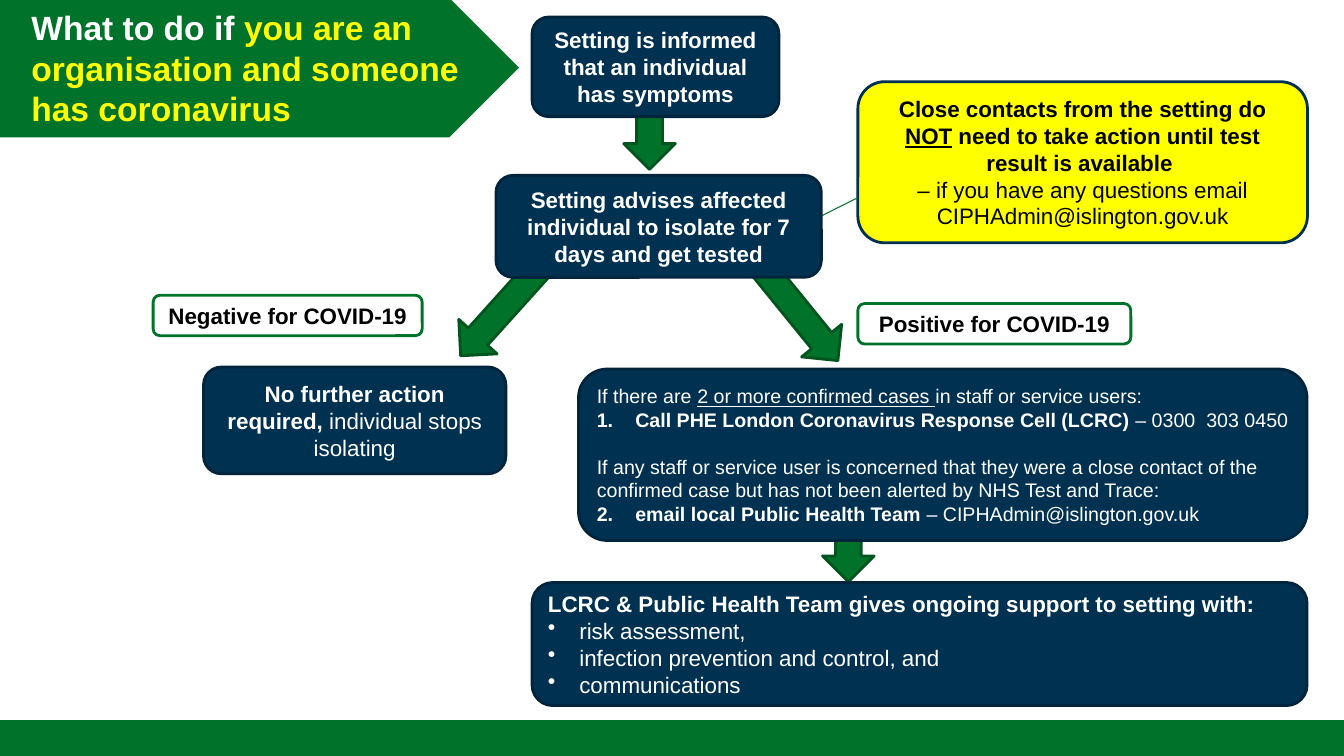
"""Flowchart slide: what an organisation does when someone has coronavirus."""
from lxml import etree
from pptx import Presentation
from pptx import util as u
from pptx.dml.color import RGBColor
from pptx.enum import shapes, text
from pptx.oxml import ns

COLOURS = {
    "green": "007229", "dark green": "00541E", "link green": "006F28",
    "navy": "003151", "dark navy": "00243C",
    "yellow": "FFFF00", "white": "FFFFFF", "black": "000000",
}
KIND = shapes.MSO_SHAPE

deck = Presentation()
deck.slide_width, deck.slide_height = u.Cm(33.87), u.Cm(19.05)
slide = deck.slides.add_slide(deck.slide_layouts[6])


def add_block(kind, box, fill, edge, width=2):
    block = slide.shapes.add_shape(kind, *[u.Cm(length) for length in box])
    block.shadow.inherit = False
    block.fill.solid()
    block.fill.fore_color.rgb = RGBColor.from_string(COLOURS[fill])
    block.line.color.rgb = RGBColor.from_string(COLOURS[edge])
    block.line.width = u.Pt(width)
    return block


def write(block, paragraphs, colour, size=16, align=text.PP_ALIGN.CENTER):
    """Fill a block; each paragraph is a marker, its indent and (words, style) runs."""
    frame = block.text_frame
    frame.word_wrap = True
    for index, (marker, indent, runs) in enumerate(paragraphs):
        paragraph = frame.add_paragraph() if index else frame.paragraphs[0]
        paragraph.alignment = align
        if marker:
            properties = paragraph._p.get_or_add_pPr()
            properties.set("marL", str(u.Cm(indent)))
            properties.set("indent", str(-u.Cm(indent)))
            if marker == "•":
                etree.SubElement(properties, ns.qn("a:buChar"), char=marker)
            else:
                etree.SubElement(properties, ns.qn("a:buAutoNum"),
                                 type="arabicPeriod", startAt=marker)
        for words, style in runs:
            run = paragraph.add_run()
            run.text = words
            run.font.name = "Arial"
            run.font.size = u.Pt(size)
            run.font.bold = "bold" in style
            run.font.underline = "underline" in style
            shade = "yellow" if "yellow" in style else colour
            run.font.color.rgb = RGBColor.from_string(COLOURS[shade])


add_block(KIND.RECTANGLE, (0, 18.16, 33.87, 0.87), "green", "green", 0.75)

no_action = add_block(KIND.ROUNDED_RECTANGLE, (5.13, 9.25, 7.62, 2.69), "navy", "dark navy")
write(no_action, [("", 0, [("No further action required, ", "bold"),
                           ("individual stops isolating", "")])], "white")

for left, top, length, turn in [(15.72, 2.62, 1.65, 0), (19.53, 6.45, 2.97, 320.9),
                                (12.09, 6.02, 3.38, 42), (20.73, 13.03, 1.63, 0)]:
    arrow = add_block(KIND.DOWN_ARROW, (left, top, 1.3, length), "green", "dark green")
    arrow.rotation = turn

for words, left, top, width in [("Negative for COVID-19", 3.86, 7.44, 6.78),
                                ("Positive for COVID-19", 21.62, 7.65, 6.88)]:
    result = add_block(KIND.ROUNDED_RECTANGLE, (left, top, width, 1.02), "white", "green")
    write(result, [("", 0, [(words, "bold")])], "black")

contacts = add_block(KIND.ROUNDED_RECTANGLE, (21.62, 2.06, 11.33, 4.06), "yellow", "navy")
write(contacts, [
    ("", 0, [("Close contacts from the setting do ", "bold"), ("NOT", "bold underline"),
             (" need to take action until test result is available ", "bold")]),
    ("", 0, [("– if you have any questions email CIPHAdmin@islington.gov.uk", "")]),
], "black")

support = add_block(KIND.ROUNDED_RECTANGLE, (13.41, 14.68, 19.53, 3.1), "navy", "dark navy")
offers = ["risk assessment,", "infection prevention and control, and", "communications"]
write(support, [
    ("", 0, [("LCRC & Public Health Team gives ongoing support to setting with:", "bold")]),
    *[("•", 0.79, [(offer, "")]) for offer in offers],
], "white", align=text.PP_ALIGN.LEFT)

contacts_link = slide.shapes.add_connector(
    shapes.MSO_CONNECTOR.STRAIGHT, u.Cm(20.6), u.Cm(5.49), u.Cm(21.62), u.Cm(4.98))
contacts_link.line.color.rgb = RGBColor.from_string(COLOURS["link green"])
contacts_link.line.width = u.Pt(0.75)
etree.SubElement(contacts_link._element.spPr, ns.qn("a:effectLst"))

title = add_block(KIND.PENTAGON, (0, -0.05, 13.08, 3.51), "green", "green")
title.line.fill.background()
title.text_frame.margin_left = u.Cm(0.79)
write(title, [("", 0, [("What to do if ", "bold"),
                       ("you are an organisation and someone has coronavirus", "bold yellow")])],
      "white", 24, text.PP_ALIGN.LEFT)

cases = add_block(KIND.ROUNDED_RECTANGLE, (14.58, 9.3, 18.36, 4.32), "navy", "dark navy")
write(cases, [
    ("", 0, [("If there are ", ""), ("2 or more confirmed cases ", "underline"),
             ("in staff or service users:", "")]),
    ("1", 0.97, [("Call PHE London Coronavirus Response Cell (LCRC) ", "bold"),
                 ("– 0300  303 0450", "")]),
    ("", 0, [("If any staff or service user is concerned that they were a close contact of the "
              "confirmed case but has not been alerted by NHS Test and Trace:", "")]),
    ("2", 0.97, [("email local Public Health Team ", "bold"),
                 ("– CIPHAdmin@islington.gov.uk", "")]),
], "white", 14, text.PP_ALIGN.LEFT)
cases.text_frame.paragraphs[2].space_before = u.Pt(16.5)

for words, box in [
    ("Setting advises affected individual to isolate for 7 days and get tested",
     (12.5, 4.42, 8.2, 2.57)),
    ("Setting is informed that an individual has symptoms", (13.41, 0.43, 6.22, 2.51)),
]:
    step = add_block(KIND.ROUNDED_RECTANGLE, box, "navy", "dark navy")
    write(step, [("", 0, [(words, "bold")])], "white")

deck.save("out.pptx")
